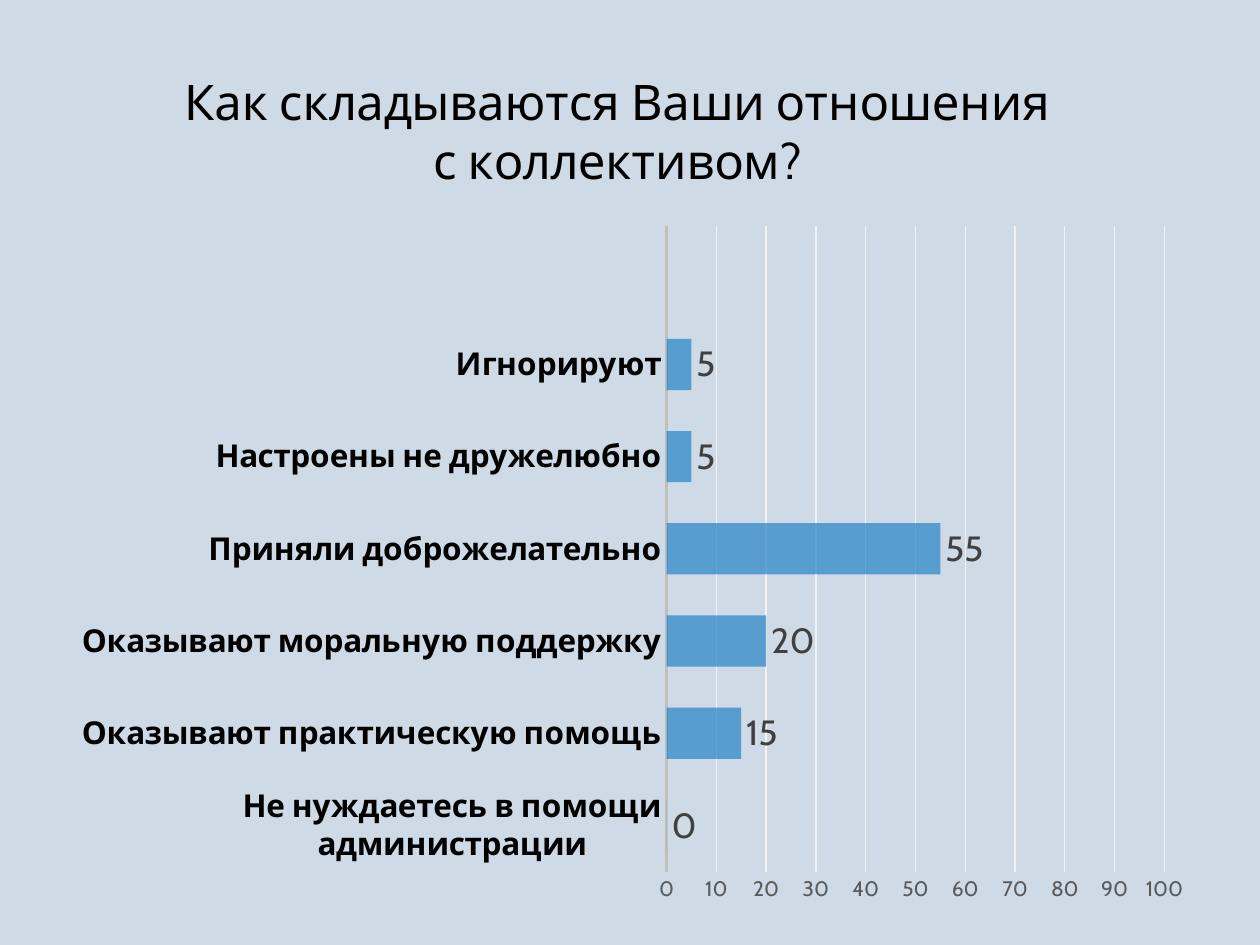
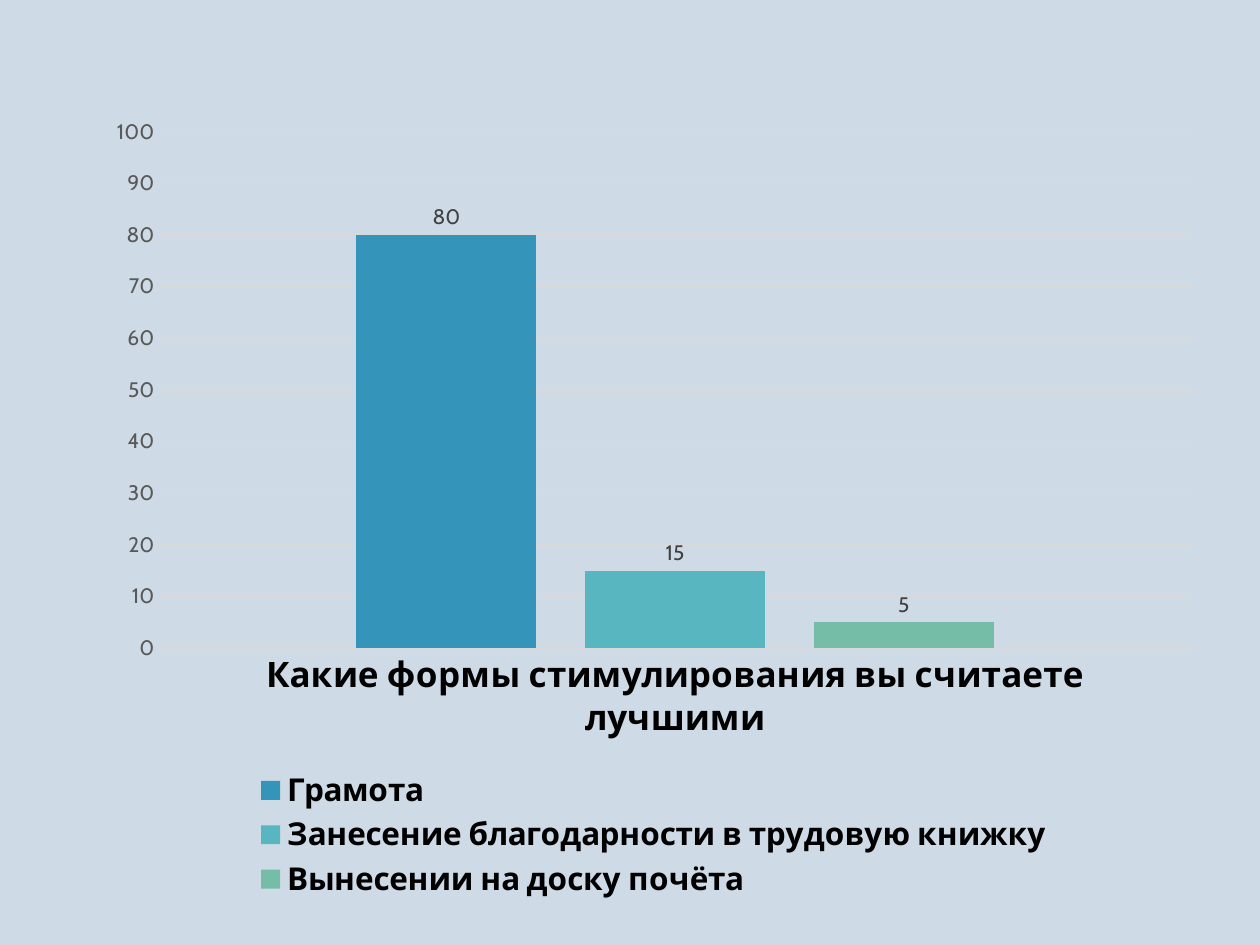
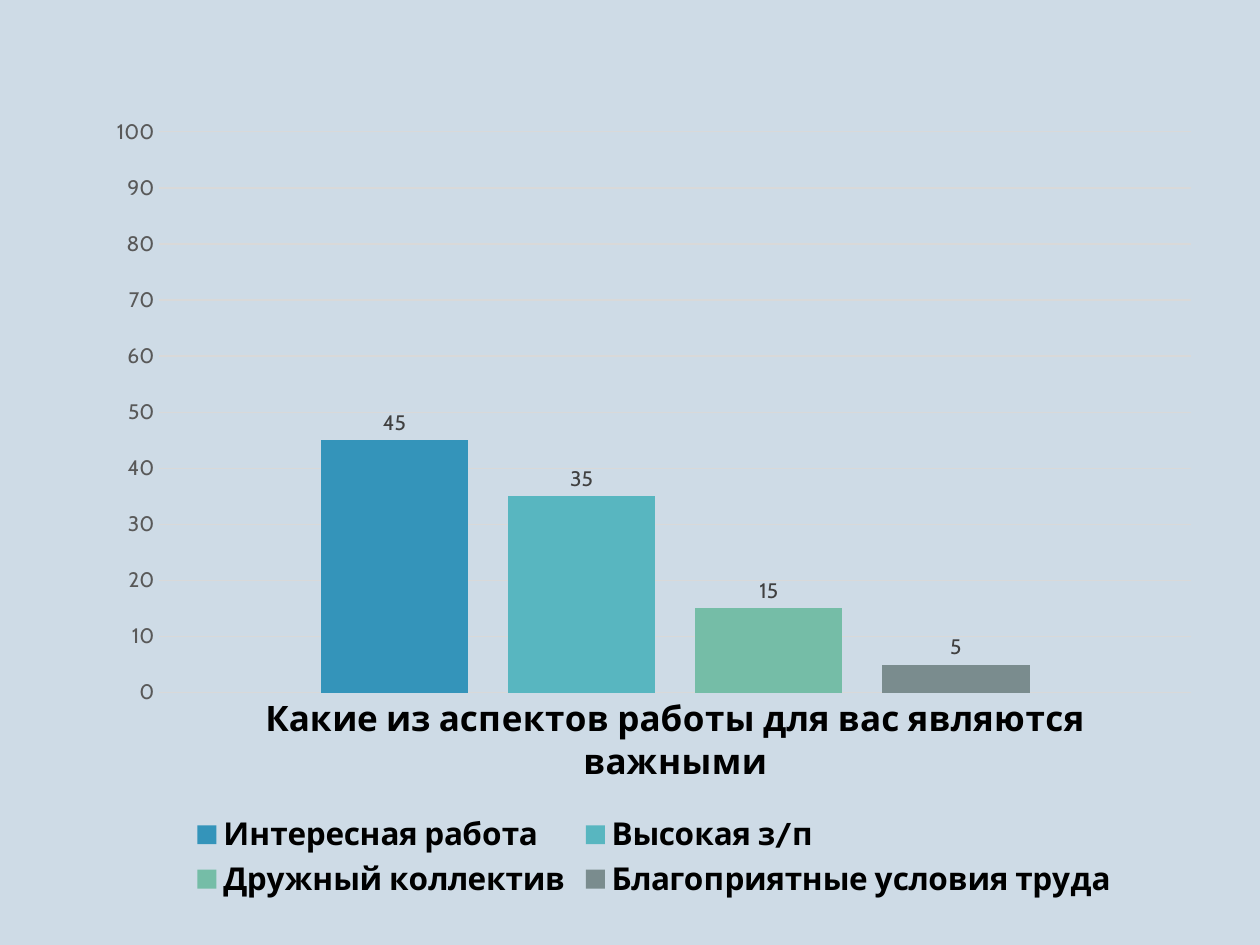
"""Build three survey slides, each with one bar or column chart."""
import pptx
import pptx.chart.data
import pptx.dml.color
import pptx.enum.chart
import pptx.oxml.ns
import pptx.oxml.xmlchemy
import pptx.util

Pt = pptx.util.Pt
qn = pptx.oxml.ns.qn
chart_enum = pptx.enum.chart

COLORS = {
    "background": "CEDBE6", "text": "000000", "label": "404040",
    "scale": "595959", "bar": "2683C6", "bar_axis": "BFBFBF",
    "bar_grid": "F2F2F2", "column_line": "D9D9D9",
    "column_1": "3494BA", "column_2": "58B6C0",
    "column_3": "75BDA7", "column_4": "7A8C8E",
}
BAR_FRAME = (30.24, 18, 661.68, 505.44)
COLUMN_FRAME = (54, 59.04, 639.36, 457.92)

RELATIONS = [
    ("Не нуждаетесь в помощи администрации", 0),
    ("Оказывают практическую помощь", 15),
    ("Оказывают моральную поддержку", 20),
    ("Приняли доброжелательно", 55),
    ("Настроены не дружелюбно", 5),
    ("Игнорируют", 5),
    ("", None),
]
COLUMN_SLIDES = [
    ("Какие формы стимулирования вы считаете лучшими", [
        ("Грамота", 80),
        ("Занесение благодарности в трудовую книжку", 15),
        ("Вынесении на доску почёта", 5),
    ]),
    ("Какие из аспектов работы для вас являются важными", [
        ("Интересная работа", 45),
        ("Высокая з/п", 35),
        ("Дружный коллектив", 15),
        ("Благоприятные условия труда", 5),
    ]),
]


def rgb(color):
    return pptx.dml.color.RGBColor.from_string(COLORS[color])


def assign(target, **values):
    for name, value in values.items():
        setattr(target, name, value)


def append_value(parent, tag, value):
    element = pptx.oxml.xmlchemy.OxmlElement(tag)
    element.set("val", str(value))
    parent.append(element)


class Deck:
    def __init__(self):
        self.presentation = pptx.Presentation()
        assign(self.presentation, slide_width=Pt(720), slide_height=Pt(540))
        self.slide = None

    def add_slide(self):
        layout = self.presentation.slide_layouts[6]
        self.slide = self.presentation.slides.add_slide(layout)
        self.style_fill(self.slide.background.fill, "background")

    def style_fill(self, fill, color):
        fill.solid()
        fill.fore_color.rgb = rgb(color)

    def style_font(self, font, size, color="text", bold=False):
        assign(font, name="Cabin", size=Pt(size), bold=bold)
        font.color.rgb = rgb(color)

    def style_line(self, line, color, width):
        line.color.rgb = rgb(color)
        line.width = Pt(width)

    def add_chart(self, kind, frame, categories, series):
        data = pptx.chart.data.CategoryChartData()
        data.categories = categories
        for name, values in series:
            data.add_series(name, values)
        chart = self.slide.shapes.add_chart(kind, *map(Pt, frame), data).chart
        assign(chart, has_title=False, has_legend=False)
        chart.plots[0].vary_by_categories = False
        self.style_font(chart.font, 10)
        return chart

    def style_axes(self, chart, category_size, axis_line, grid_color):
        none = chart_enum.XL_TICK_MARK.NONE
        for axis in (chart.category_axis, chart.value_axis):
            assign(axis, major_tick_mark=none, minor_tick_mark=none)
        self.style_font(chart.category_axis.tick_labels.font, category_size, bold=True)
        self.style_line(chart.category_axis.format.line, *axis_line)
        value_axis = chart.value_axis
        assign(value_axis, minimum_scale=0, maximum_scale=100, major_unit=10,
               has_major_gridlines=True)
        self.style_font(value_axis.tick_labels.font, 12, "scale")
        value_axis.format.line.fill.background()
        self.style_line(value_axis.major_gridlines.format.line, grid_color, 0.75)

    def style_series(self, series, color, label_size, opacity=100):
        self.style_fill(series.format.fill, color)
        if opacity < 100:
            color_element = series._element.find(".//" + qn("a:srgbClr"))
            append_value(color_element, "a:alpha", opacity * 1000)
        labels = series.data_labels
        assign(labels, show_value=True,
               position=chart_enum.XL_LABEL_POSITION.OUTSIDE_END)
        self.style_font(labels.font, label_size, "label")

    def place(self, parent, **values):
        layout = parent.find(qn("c:layout"))
        if layout is None:
            layout = pptx.oxml.xmlchemy.OxmlElement("c:layout")
            parent.insert(len(parent.findall(qn("c:tx"))), layout)
        manual = pptx.oxml.xmlchemy.OxmlElement("c:manualLayout")
        layout.append(manual)
        for name, value in values.items():
            append_value(manual, "c:" + name, value)

    def add_title(self, chart, text):
        chart.has_title = True
        title = chart.chart_title
        title.text_frame.text = text
        for paragraph in title.text_frame.paragraphs:
            for run in paragraph.runs:
                self.style_font(run.font, 28)
        self.place(title._element, xMode="edge", yMode="edge", x=0.11, y=0.04)

    def add_legend(self, chart):
        chart.has_legend = True
        assign(chart.legend, include_in_layout=False,
               position=chart_enum.XL_LEGEND_POSITION.BOTTOM)
        self.style_font(chart.legend.font, 18, bold=True)

    def add_bar_slide(self, title, answers):
        self.add_slide()
        categories, values = zip(*answers)
        chart = self.add_chart(chart_enum.XL_CHART_TYPE.BAR_CLUSTERED, BAR_FRAME,
                               categories, [("Series 1", values)])
        chart.plots[0].gap_width = 80
        self.add_title(chart, title)
        self.style_axes(chart, 18, ("bar_axis", 1.25), "bar_grid")
        self.style_series(chart.plots[0].series[0], "bar", 20, opacity=70)
        plot_area = chart._chartSpace.find(".//" + qn("c:plotArea"))
        self.place(plot_area, layoutTarget="inner", xMode="edge", yMode="edge",
                   x=0.53, y=0.22, w=0.43, h=0.73)

    def add_column_slide(self, question, answers):
        self.add_slide()
        series = [(name, [value]) for name, value in answers]
        chart = self.add_chart(chart_enum.XL_CHART_TYPE.COLUMN_CLUSTERED, COLUMN_FRAME,
                               [question], series)
        assign(chart.plots[0], gap_width=219, overlap=-27)
        self.style_axes(chart, 20, ("column_line", 0.75), "column_line")
        for number, column in enumerate(chart.plots[0].series, 1):
            self.style_series(column, f"column_{number}", 12)
        self.add_legend(chart)


def main():
    deck = Deck()
    deck.add_bar_slide("Как складываются Ваши отношения\nс коллективом?", RELATIONS)
    for question, answers in COLUMN_SLIDES:
        deck.add_column_slide(question, answers)
    deck.presentation.save("out.pptx")


if __name__ == "__main__":
    main()
